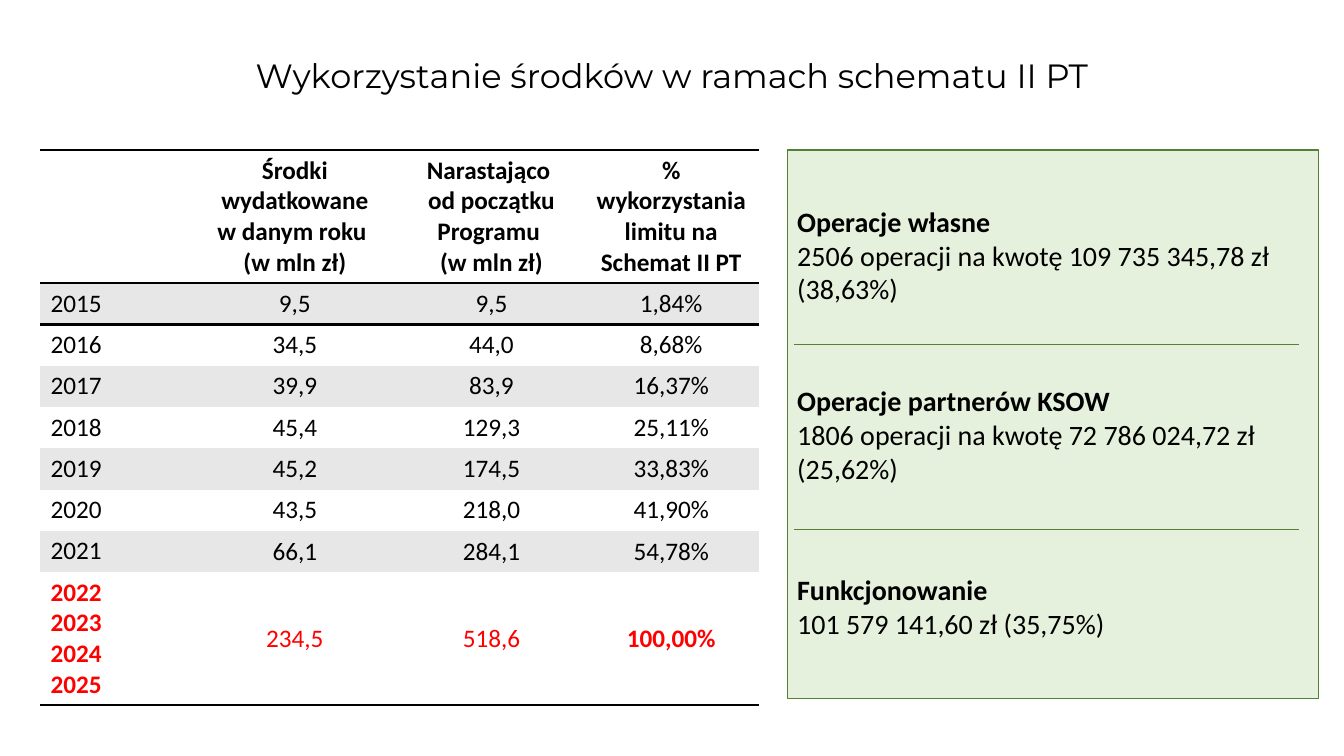
from lxml import etree
from pptx import Presentation
from pptx.dml.color import RGBColor
from pptx.enum.shapes import MSO_CONNECTOR, MSO_SHAPE
from pptx.enum.text import MSO_ANCHOR, MSO_AUTO_SIZE, PP_ALIGN
from pptx.oxml.ns import qn
from pptx.util import Cm, Pt

# Content: \n starts a paragraph, \v breaks a line
TITLE = "Wykorzystanie środków w ramach schematu II PT"
HEADER = (
    "",
    "Środki wydatkowane\nw danym roku \v(w mln zł)",
    "Narastająco \vod początku\nProgramu \v(w mln zł)",
    "% wykorzystania\nlimitu na\nSchemat II PT",
)
YEARS = [
    ("2015", "9,5", "9,5", "1,84%"),
    ("2016", "34,5", "44,0", "8,68%"),
    ("2017", "39,9", "83,9", "16,37%"),
    ("2018", "45,4", "129,3", "25,11%"),
    ("2019", "45,2", "174,5", "33,83%"),
    ("2020", "43,5", "218,0", "41,90%"),
    ("2021", "66,1", "284,1", "54,78%"),
]
FORECAST = ("2022\v2023\n2024\v2025", "234,5", "518,6", "100,00%")
# Heading, details, top and height in cm
OPERATIONS = [
    ("Operacje własne", "2506 operacji na kwotę 109 735 345,78 zł (38,63%)", 5.03, 2.82),
    ("Operacje partnerów KSOW", "1806 operacji na kwotę 72 786 024,72 zł (25,62%)", 9.55, 2.82),
    ("Funkcjonowanie", "101 579 141,60 zł (35,75%)", 14.3, 1.96),
]
DIVIDERS = (8.67, 13.34)

BLACK = RGBColor(0x00, 0x00, 0x00)
WHITE = RGBColor(0xFF, 0xFF, 0xFF)
RED = RGBColor(0xFF, 0x00, 0x00)
BAND = RGBColor(0xE7, 0xE7, 0xE7)
GREEN = RGBColor(0x70, 0xAD, 0x47)
GREEN_EDGE = RGBColor(0x53, 0x80, 0x35)
GREEN_RULE = RGBColor(0x54, 0x82, 0x35)
LEFT, CENTER = PP_ALIGN.LEFT, PP_ALIGN.CENTER
TOP, MIDDLE = MSO_ANCHOR.TOP, MSO_ANCHOR.MIDDLE

CONTENT_TOP = Cm(3.78)
COLUMN_WIDTHS = (3.78, 5.26, 4.65, 4.41)
ROW_HEIGHT, TALL_ROW = Cm(1.04), Cm(3.35)
PANEL_LEFT = Cm(19.84)
NO_GRID_STYLE = "{2D5ABB26-0587-4C30-8999-92F81FD0307C}"


def style_font(font, size, color=BLACK, bold=False, name="Calibri"):
    font.name, font.size, font.bold = name, Pt(size), bold
    font.color.rgb = color


def add_border(cell, sides):
    properties = cell._tc.get_or_add_tcPr()
    for position, side in enumerate(sides):
        line = etree.Element(qn(f"a:ln{side}"), w=str(Pt(2)))
        fill = etree.SubElement(line, qn("a:solidFill"))
        etree.SubElement(fill, qn("a:srgbClr"), val=str(BLACK))
        properties.insert(position, line)


deck = Presentation()
deck.slide_width, deck.slide_height = Cm(33.87), Cm(19.05)
page = deck.slides.add_slide(deck.slide_layouts[5])

# Title
title = page.shapes.title
title.left, title.top, title.width, title.height = Cm(0.38), Cm(0.91), Cm(33.1), Cm(2.08)
title.text_frame.text = TITLE
title.text_frame.vertical_anchor = MIDDLE
para = title.text_frame.paragraphs[0]
para.alignment, para.line_spacing = CENTER, 0.9
style_font(para.font, 24, name="Montserrat")

# Spending table
rows = [HEADER, *YEARS, FORECAST]
last = len(rows) - 1
table_height = ROW_HEIGHT * len(YEARS) + TALL_ROW * 2
table = page.shapes.add_table(
    len(rows), len(HEADER), Cm(1.02), CONTENT_TOP, Cm(sum(COLUMN_WIDTHS)), table_height
).table
table.first_row = table.horz_banding = False
table._tbl.tblPr.find(qn("a:tableStyleId")).text = NO_GRID_STYLE
for column, width in zip(table.columns, COLUMN_WIDTHS):
    column.width = Cm(width)
for r, row in enumerate(rows):
    table.rows[r].height = TALL_ROW if r in (0, last) else ROW_HEIGHT
    for c, text in enumerate(row):
        cell = table.cell(r, c)
        is_year = c == 0 and r > 0
        cell.text_frame.text = text
        cell.vertical_anchor = TOP if is_year else MIDDLE
        bold = r == 0 or (r == last and c in (0, 3))
        for para in cell.text_frame.paragraphs:
            para.alignment = LEFT if is_year else CENTER
            style_font(para.font, 18, RED if r == last else BLACK, bold)
        if r == 0:
            cell.fill.background()
            add_border(cell, "TB")
        else:
            cell.fill.solid()
            cell.fill.fore_color.rgb = BAND if r % 2 else WHITE
            if r == 1:
                add_border(cell, "T")
            elif r == last:
                add_border(cell, "B")

# Green panel
panel = page.shapes.add_shape(MSO_SHAPE.RECTANGLE, PANEL_LEFT, CONTENT_TOP, Cm(13.39), Cm(13.82))
panel.shadow.inherit = False
panel.fill.solid()
panel.fill.fore_color.rgb = GREEN
color = panel.fill._xPr.find(qn("a:solidFill")).find(qn("a:srgbClr"))
etree.SubElement(color, qn("a:alpha"), val="18000")
panel.line.color.rgb = GREEN_EDGE
panel.line.width = Pt(1)

# Operations on the panel
for heading, details, top, height in OPERATIONS:
    box = page.shapes.add_textbox(PANEL_LEFT, Cm(top), Cm(12.9), Cm(height))
    frame = box.text_frame
    frame.word_wrap = True
    frame.auto_size = MSO_AUTO_SIZE.SHAPE_TO_FIT_TEXT
    para = frame.paragraphs[0]
    style_font(para.font, 20)
    span = para.add_run()
    span.text = heading
    span.font.bold = True
    para.add_line_break()
    para.add_run().text = details

# Dividers
for y in DIVIDERS:
    rule = page.shapes.add_connector(MSO_CONNECTOR.STRAIGHT, Cm(20.02), Cm(y), Cm(32.74), Cm(y))
    rule.line.color.rgb = GREEN_RULE
    rule.line.width = Pt(0.5)
    etree.SubElement(rule._element.spPr, qn("a:effectLst"))

deck.save("out.pptx")
